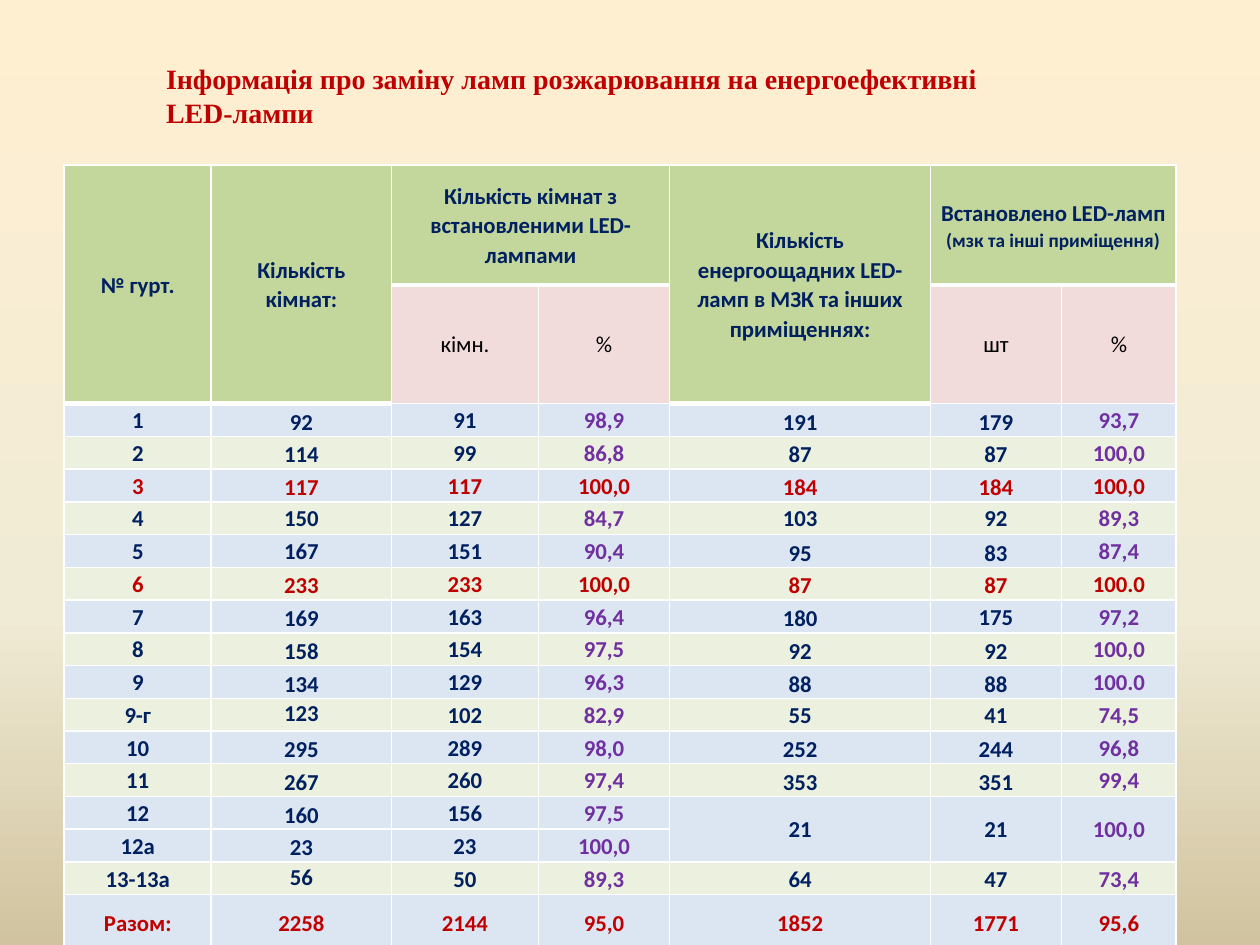
"""Slide with a table on replacing incandescent lamps with LED lamps in dormitories."""
from lxml.etree import SubElement
from pptx import Presentation
from pptx.dml.color import RGBColor
from pptx.enum.text import MSO_ANCHOR, PP_ALIGN
from pptx.oxml import parse_xml
from pptx.oxml.ns import nsdecls, qn
from pptx.util import Pt

COLORS = {
    "navy": "002060", "red": "C00000", "purple": "7030A0", "black": "000000",
    "header": "C3D69B", "subheader": "F2DCDB", "blue": "DCE6F2", "green": "EBF1DE",
    "border": "FFFFFF", "sky": "FFEFD1", "middle": "F0EBD5", "ground": "D1C39F",
}
ANCHORS = {"t": MSO_ANCHOR.TOP, "m": MSO_ANCHOR.MIDDLE, "b": MSO_ANCHOR.BOTTOM}
CELL_FORMAT = {"margin_left": Pt(5), "margin_right": Pt(5), "margin_top": 0, "margin_bottom": 0}
CELL_PARAGRAPH = {"alignment": PP_ALIGN.CENTER, "line_spacing": 1.07}
COLUMN_WIDTHS = [84, 103, 84, 75, 149, 75, 65.5]
ROW_HEIGHTS = [68.4, 23.8] + [18.72] * 15 + [32.4]
MERGES = [(0, 0, 1, 0), (0, 1, 1, 1), (0, 2, 0, 3), (0, 4, 1, 4), (0, 5, 0, 6),
          (14, 4, 15, 4), (14, 5, 15, 5), (14, 6, 15, 6)]
HEADERS = [
    ["№ гурт.", "Кількість кімнат:", "Кількість кімнат з встановленими LED-лампами", "",
     "Кількість енергоощадних LED-ламп в МЗК та інших приміщеннях:",
     "Встановлено LED-ламп\n(мзк та інші приміщення)", ""],
    ["", "", "кімн.", "%", "", "шт", "%"],
]
DORMITORIES = [
    ("bbb", ["1", "92", "91", "98,9", "191", "179", "93,7"]),
    ("bbb", ["2", "114", "99", "86,8", "87", "87", "100,0"]),
    ("bbb", ["3", "117", "117", "100,0", "184", "184", "100,0"]),
    ("mmm", ["4", "150", "127", "84,7", "103", "92", "89,3"]),
    ("mbb", ["5", "167", "151", "90,4", "95", "83", "87,4"]),
    ("bbb", ["6", "233", "233", "100,0", "87", "87", "100.0"]),
    ("bbm", ["7", "169", "163", "96,4", "180", "175", "97,2"]),
    ("bbb", ["8", "158", "154", "97,5", "92", "92", "100,0"]),
    ("bbb", ["9", "134", "129", "96,3", "88", "88", "100.0"]),
    ("tmm", ["9-г", "123", "102", "82,9", "55", "41", "74,5"]),
    ("bbb", ["10", "295", "289", "98,0", "252", "244", "96,8"]),
    ("bbb", ["11", "267", "260", "97,4", "353", "351", "99,4"]),
    ("bmm", ["12", "160", "156", "97,5", "21", "21", "100,0"]),
    ("bmm", ["12а", "23", "23", "100,0", "", "", ""]),
    ("tmm", ["13-13а", "56", "50", "89,3", "64", "47", "73,4"]),
    ("mmm", ["Разом:", "2258", "2144", "95,0", "1852", "1771", "95,6"]),
]
BLUE_ROWS = {"1", "3", "5", "7", "9", "10", "12", "12а", "Разом:"}
RED_ROWS = {"3", "6", "Разом:"}


def write(frame, text, color, size, font, bold, paragraph_format):
    frame.text = text
    for paragraph in frame.paragraphs:
        for name, value in paragraph_format.items():
            setattr(paragraph, name, value)
        for run in paragraph.runs:
            font_format = {"name": font, "size": Pt(size), "bold": bold}
            for name, value in font_format.items():
                setattr(run.font, name, value)
            run.font.color.rgb = RGBColor.from_string(COLORS[color])


def style_cell(cell, fill, anchor, bottom_width):
    for name, value in {**CELL_FORMAT, "vertical_anchor": ANCHORS[anchor]}.items():
        setattr(cell, name, value)
    properties = cell._tc.get_or_add_tcPr()
    for side, width in {"L": 1, "R": 1, "T": 1, "B": bottom_width}.items():
        border = SubElement(properties, qn(f"a:ln{side}"), w=str(Pt(width)))
        SubElement(SubElement(border, qn("a:solidFill")), qn("a:srgbClr"), val=COLORS["border"])
    cell.fill.solid()
    cell.fill.fore_color.rgb = RGBColor.from_string(COLORS[fill])


presentation = Presentation()
presentation.slide_width, presentation.slide_height = Pt(720), Pt(540)
slide = presentation.slides.add_slide(presentation.slide_layouts[6])

stops = "".join(
    f'<a:gs pos="{position * 1000}"><a:srgbClr val="{COLORS[color]}"/></a:gs>'
    for position, color in [(0, "sky"), (65, "middle"), (100, "ground")]
)
slide._element.cSld.insert(0, parse_xml(
    f'<p:bg {nsdecls("p", "a")}><p:bgPr><a:gradFill rotWithShape="1"><a:gsLst>{stops}</a:gsLst>'
    '<a:lin ang="5400000" scaled="0"/></a:gradFill><a:effectLst/></p:bgPr></p:bg>'
))

lamps = slide.shapes.add_table(
    len(ROW_HEIGHTS), len(COLUMN_WIDTHS), Pt(36.7), Pt(94.4),
    Pt(sum(COLUMN_WIDTHS)), Pt(sum(ROW_HEIGHTS))
).table
lamps.first_row = lamps.horz_banding = False
for column, width in zip(lamps.columns, COLUMN_WIDTHS):
    column.width = Pt(width)
for row, height in zip(lamps.rows, ROW_HEIGHTS):
    row.height = Pt(height)
for top, left, bottom, right in MERGES:
    lamps.cell(top, left).merge(lamps.cell(bottom, right))

for row, labels in enumerate(HEADERS):
    for column, label in enumerate(labels):
        cell = lamps.cell(row, column)
        is_subheader = row == 1 and label != ""
        style_cell(cell, "subheader" if is_subheader else "header", "m", 1 if is_subheader else 3)
        if label:
            write(cell.text_frame, label, "black" if is_subheader else "navy", 13, "Calibri",
                  not is_subheader, CELL_PARAGRAPH)
lamps.cell(0, 5).text_frame.paragraphs[1].runs[0].font.size = Pt(11)

for row, (anchors, values) in enumerate(DORMITORIES, start=len(HEADERS)):
    dormitory = values[0]
    column_anchors = dict(zip([1, 4, 5], anchors))
    for column, value in enumerate(values):
        cell = lamps.cell(row, column)
        style_cell(cell, "blue" if dormitory in BLUE_ROWS else "green",
                   column_anchors.get(column, "m"), 1)
        color = "red" if dormitory in RED_ROWS else "purple" if column in (3, 6) else "navy"
        if value:
            write(cell.text_frame, value, color, 13, "Calibri", True, CELL_PARAGRAPH)

heading = slide.shapes.add_textbox(Pt(87.8), Pt(31.7), Pt(488.2), Pt(67.7)).text_frame
for name, value in {"word_wrap": True, "vertical_anchor": MSO_ANCHOR.TOP}.items():
    setattr(heading, name, value)
write(heading, "Інформація про заміну ламп розжарювання на енергоефективні\nLED-лампи",
      "red", 16, "Times New Roman", True, {"alignment": PP_ALIGN.LEFT})

presentation.save("out.pptx")
